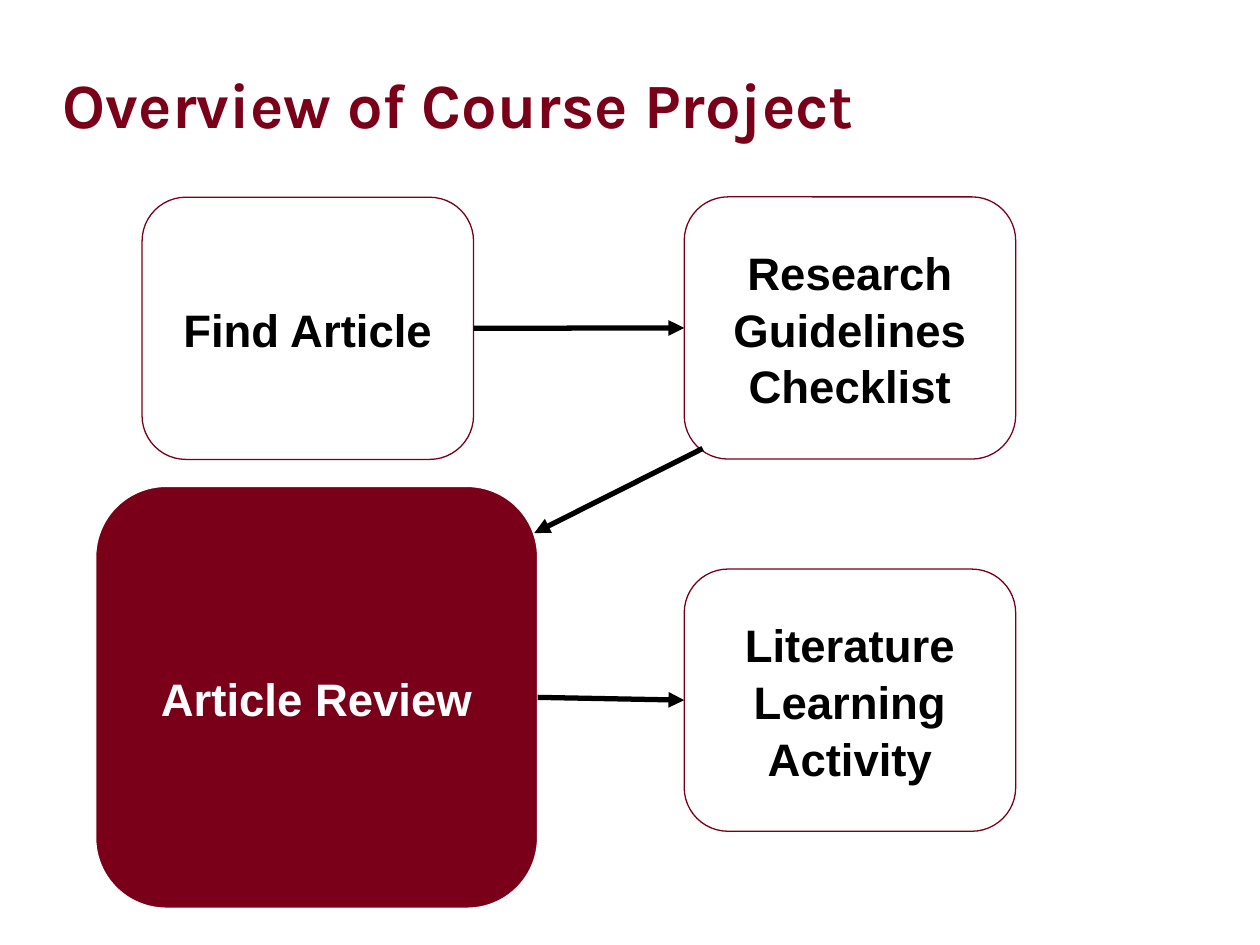
from pptx import Presentation
from pptx.dml.color import RGBColor
from pptx.enum.shapes import MSO_CONNECTOR as Line, MSO_SHAPE as Preset
from pptx.enum.text import MSO_ANCHOR as Anchor, PP_ALIGN as Align
from pptx.oxml.ns import qn
from pptx.util import Pt
from lxml.etree import SubElement

MAROON, WHITE, BLACK = "7A0019", "FFFFFF", "000000"
STEP_SIZE = (189.4, 149.8)
LEFT_SIDE, RIGHT_SIDE = 1, 3


def color(hex_value):
    return RGBColor.from_string(hex_value)


def set_attributes(target, values):
    for name, value in values.items():
        setattr(target, name, value)


def write(frame, text, font, size, hex_value, align, anchor, inset):
    margins = {f"margin_{side}": Pt(inset) for side in ("left", "top", "right", "bottom")}
    set_attributes(frame, {"word_wrap": True, "vertical_anchor": anchor, **margins})
    paragraph = frame.paragraphs[0]
    set_attributes(paragraph, {"alignment": align, "line_spacing": 1.04})
    run = paragraph.add_run()
    run.text = text
    set_attributes(run.font, {"name": font, "size": Pt(size), "bold": True})
    run.font.color.rgb = color(hex_value)


def add_title(slide, text):
    title = slide.shapes.add_textbox(Pt(36), Pt(36), Pt(648), Pt(54.7))
    write(title.text_frame, text, "Karla", 36, MAROON, Align.LEFT, Anchor.TOP, 0)


def add_step(slide, text, left, top, size=STEP_SIZE, fill=WHITE, outline=MAROON, ink=BLACK):
    step = slide.shapes.add_shape(
        Preset.ROUNDED_RECTANGLE, Pt(left), Pt(top), *map(Pt, size))
    step.adjustments[0] = 0.167
    step.shadow.inherit = False
    step.fill.solid()
    step.fill.fore_color.rgb = color(fill)
    step.line.color.rgb = color(outline)
    step.line.width = Pt(0.75)
    write(step.text_frame, text, "Arial", 26, ink, Align.CENTER, Anchor.MIDDLE, 7.2)
    return step


def add_arrow(slide, start=(0, 0), end=(0, 0)):
    arrow = slide.shapes.add_connector(Line.STRAIGHT, *map(Pt, start + end))
    arrow.line.color.rgb = color(BLACK)
    arrow.line.width = Pt(3)
    properties = arrow._element.spPr
    SubElement(properties.find(qn("a:ln")), qn("a:tailEnd"), type="triangle")
    SubElement(properties, qn("a:effectLst"))
    return arrow


def join_across(slide, source, target):
    arrow = add_arrow(slide)
    arrow.begin_connect(source, RIGHT_SIDE)
    arrow.end_connect(target, LEFT_SIDE)


def main():
    deck = Presentation()
    set_attributes(deck, {"slide_width": Pt(720), "slide_height": Pt(540)})
    slide = deck.slides.add_slide(deck.slide_layouts[6])
    add_title(slide, "Overview of Course Project")

    # Project steps, with the current one highlighted
    checklist = add_step(slide, "Research Guidelines Checklist", 391, 112.5)
    review = add_step(slide, "Article Review", 54.7, 278, (252.5, 241),
                      fill=MAROON, outline=WHITE, ink=WHITE)
    activity = add_step(slide, "Literature Learning Activity", 391, 325.2)
    find = add_step(slide, "Find Article", 81.2, 112.7)

    # Order of the steps
    join_across(slide, find, checklist)
    add_arrow(slide, (401.5, 256.3), (305.3, 304.6))
    join_across(slide, review, activity)

    deck.save("out.pptx")


if __name__ == "__main__":
    main()
